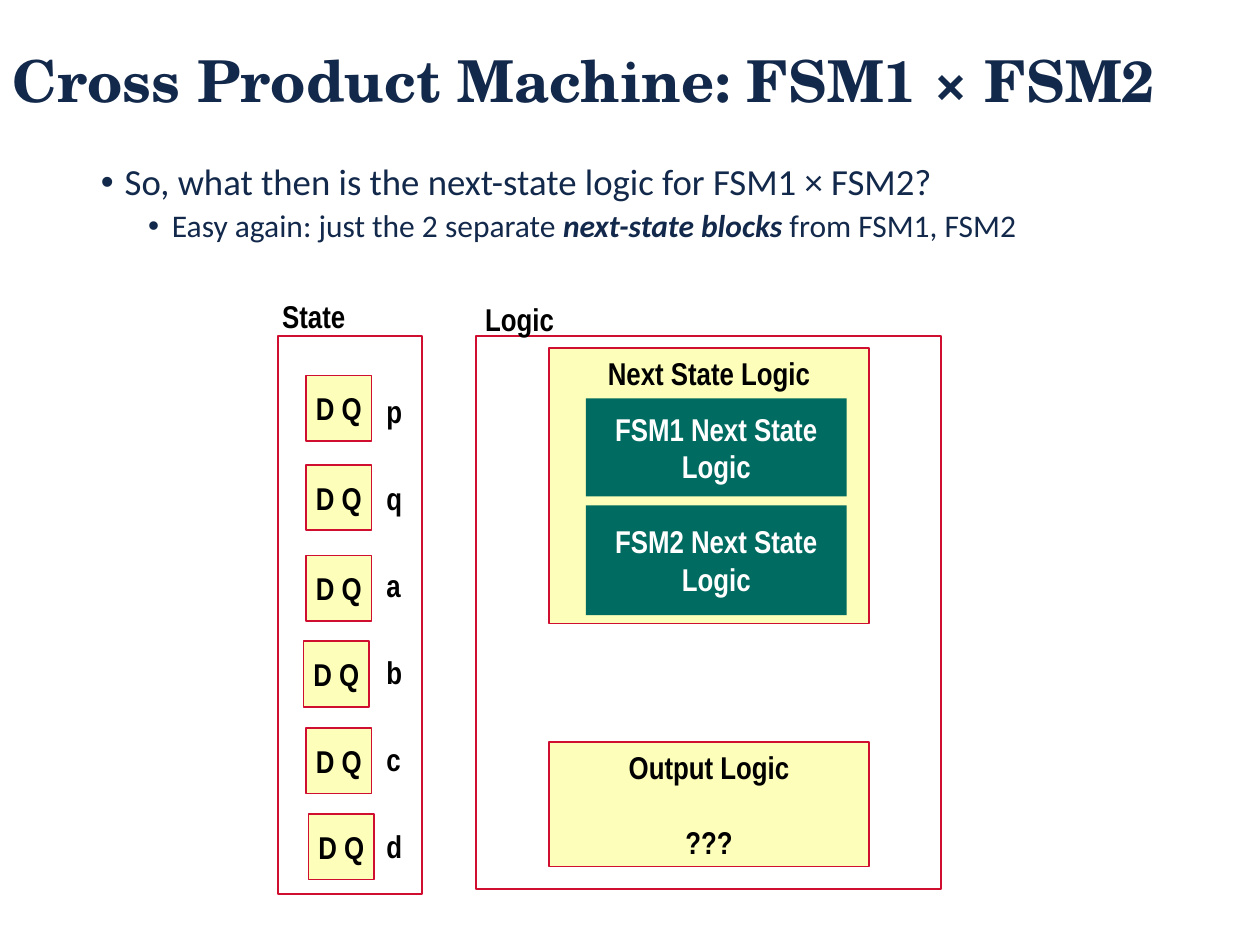
from pptx import Presentation
from pptx.dml.color import RGBColor
from pptx.enum.shapes import MSO_SHAPE as SHAPE
from pptx.enum.text import MSO_ANCHOR as ANCHOR, MSO_AUTO_SIZE as AUTO, PP_ALIGN as ALIGN
from pptx.oxml.ns import qn
from pptx.util import Cm, Pt
from lxml import etree

COLORS = {"navy": "13294B", "red": "CF0E30", "yellow": "FCFEB9",
          "green": "006B61", "black": "000000", "white": "FFFFFF"}


def rgb(name):
    return RGBColor.from_string(COLORS[name])


def place(sp, box):
    sp.left, sp.top, sp.width, sp.height = (Cm(v) for v in box)


def add_run(p, text, size, font, color, bold=False, italic=False):
    r = p.add_run()
    r.text = text
    f = r.font
    f.size, f.name, f.bold, f.italic = Pt(size), font, bold, italic
    f.color.rgb = rgb(color)


def add_lines(tf, lines, color="black", align=ALIGN.CENTER, gap=0, spacing=None):
    """Write one diagram paragraph per line, with gap points between them."""
    for i, line in enumerate(lines):
        p = tf.add_paragraph() if i else tf.paragraphs[0]
        p.alignment = align
        p.space_before = Pt(gap if i else 0)
        if spacing:
            p.line_spacing = spacing
        add_run(p, line, 18, "Arial Narrow", color, bold=True)


def add_block(s, box, fill=None, line="red", lines=(), color="black",
              anchor=ANCHOR.MIDDLE, gap=0):
    sp = s.shapes.add_shape(SHAPE.RECTANGLE, *(Cm(v) for v in box))
    sp.shadow.inherit = False
    if fill:
        sp.fill.solid()
        sp.fill.fore_color.rgb = rgb(fill)
    else:
        sp.fill.background()
    if line:
        sp.line.color.rgb = rgb(line)
        sp.line.width = Pt(1)
    else:
        sp.line.fill.background()
    tf = sp.text_frame
    tf.word_wrap = False
    tf.vertical_anchor = anchor
    add_lines(tf, lines, color, gap=gap)


def add_label(s, box, lines, gap=0, spacing=None):
    tf = s.shapes.add_textbox(*(Cm(v) for v in box)).text_frame
    tf.word_wrap = False
    tf.auto_size = AUTO.SHAPE_TO_FIT_TEXT
    add_lines(tf, lines, align=ALIGN.LEFT, gap=gap, spacing=spacing)


def add_title(s, box, text):
    sp = s.shapes.title
    place(sp, box)
    tf = sp.text_frame
    tf.auto_size = AUTO.NONE
    tf.vertical_anchor = ANCHOR.MIDDLE
    p = tf.paragraphs[0]
    p.alignment = ALIGN.LEFT
    p.line_spacing = 0.9
    add_run(p, text, 33, "TeX Gyre Schola", "navy", bold=True)


def add_bullets(s, box, items):
    """Fill the body with (level, size, space before, runs) items."""
    sp = s.placeholders[1]
    place(sp, box)
    tf = sp.text_frame
    tf.auto_size = AUTO.NONE
    for i, (level, size, before, runs) in enumerate(items):
        p = tf.add_paragraph() if i else tf.paragraphs[0]
        p.level = level
        p.line_spacing = 0.9
        p.space_before = Pt(before)
        pPr = p._p.get_or_add_pPr()
        pPr.set("marL", str(Cm(0.48 + 0.95 * level)))
        pPr.set("indent", str(-Cm(0.48)))
        etree.SubElement(pPr, qn("a:buFont")).set("typeface", "Arial")
        etree.SubElement(pPr, qn("a:buChar")).set("char", "•")
        for text, strong in runs:
            add_run(p, text, size, "Calibri", "navy", strong, strong)


def add_state(s, box):
    """Frame with one flip-flop for each state bit."""
    x, y, w, h = box
    add_block(s, box)
    add_label(s, (x - 0.17, y - 0.91, 1.8, 1.02), ["State"])
    flip_flops = [(0.56, 0.79), (0.56, 2.59), (0.56, 4.42),
                  (0.51, 6.15), (0.56, 7.9), (0.61, 9.63)]
    for dx, dy in flip_flops:
        add_block(s, (x + dx, y + dy, 1.32, 1.32), "yellow", lines=["D Q"])
    add_label(s, (x + 1.93, y + 0.89, 0.84, 9.96), "pqabcd", gap=24.9, spacing=1.15)


def add_logic(s, box):
    """Frame with the next-state logic above the output logic."""
    x, y, w, h = box
    add_block(s, box)
    add_label(s, (x - 0.07, y - 0.86, 1.91, 1.02), ["Logic"])
    add_block(s, (x + 1.47, y + 0.23, 6.45, 5.56), "yellow",
              lines=["Next State Logic"], anchor=ANCHOR.TOP)
    for name, dy, height in [("FSM1", 1.25, 1.98), ("FSM2", 3.41, 2.21)]:
        add_block(s, (x + 2.21, y + dy, 5.26, height), "green", None,
                  [f"{name} Next State", "Logic"], "white")
    add_block(s, (x + 1.47, y + 8.18, 6.45, 2.51), "yellow",
              lines=["Output Logic", "???"], gap=21.6)


def main():
    prs = Presentation()
    prs.slide_width, prs.slide_height = Cm(25.4), Cm(19.05)
    s = prs.slides.add_slide(prs.slide_layouts[1])
    add_title(s, (0, 0.64, 25.4, 2.11), "Cross Product Machine: FSM1 × FSM2")
    add_bullets(s, (1.78, 3.18, 21.95, 14.43), [
        (0, 21, 0, [("So, what then is the next-state logic for FSM1 × FSM2?", False)]),
        (1, 18, 3.8, [("Easy again: just the 2 separate ", False),
                      ("next-state blocks", True),
                      (" from FSM1, FSM2", False)]),
    ])
    add_state(s, (5.61, 6.78, 2.9, 11.25))
    add_logic(s, (9.6, 6.78, 9.37, 11.15))
    prs.save("out.pptx")


if __name__ == "__main__":
    main()
